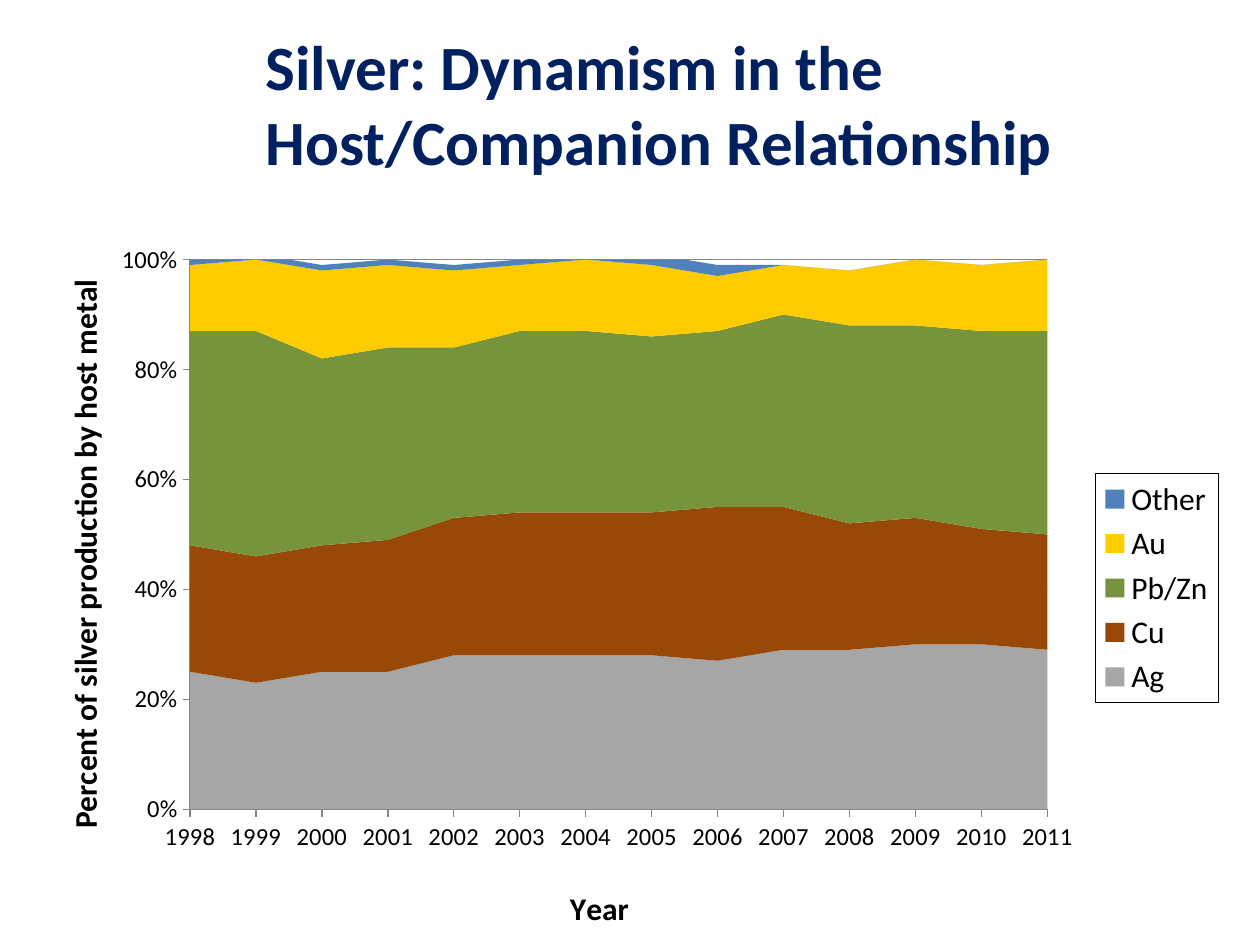
from lxml import etree
from pptx import Presentation
from pptx.chart.data import CategoryChartData
from pptx.dml.color import RGBColor
from pptx.enum.chart import XL_CHART_TYPE, XL_LEGEND_POSITION, XL_TICK_MARK
from pptx.enum.text import MSO_ANCHOR, PP_ALIGN
from pptx.oxml import parse_xml
from pptx.oxml.ns import nsdecls, qn
from pptx.util import Pt

AREA = XL_CHART_TYPE.AREA_STACKED
RIGHT = XL_LEGEND_POSITION.RIGHT
OUT = XL_TICK_MARK.OUTSIDE
TOP = MSO_ANCHOR.TOP
LEFT = PP_ALIGN.LEFT

FONT = "Calibri"
NAVY = RGBColor(0x00, 0x20, 0x60)
BLACK = RGBColor(0x00, 0x00, 0x00)
GREY = RGBColor(0x86, 0x86, 0x86)

YEARS = [str(year) for year in range(1998, 2012)]
# Host metal: colour and yearly share in percent
METALS = {
    "Ag": (RGBColor(0xA6, 0xA6, 0xA6),
           [25, 23, 25, 25, 28, 28, 28, 28, 27, 29, 29, 30, 30, 29]),
    "Cu": (RGBColor(0x98, 0x48, 0x07),
           [23, 23, 23, 24, 25, 26, 26, 26, 28, 26, 23, 23, 21, 21]),
    "Pb/Zn": (RGBColor(0x77, 0x93, 0x3C),
              [39, 41, 34, 35, 31, 33, 33, 32, 32, 35, 36, 35, 36, 37]),
    "Au": (RGBColor(0xFF, 0xCC, 0x00),
           [12, 13, 16, 15, 14, 12, 13, 13, 10, 9, 10, 12, 12, 13]),
    "Other": (RGBColor(0x4F, 0x81, 0xBD),
              [1, 1, 1, 1, 1, 1, 1, 2, 2, 0, 0, 0, 0, 0]),
}


def style(font, size, color=BLACK, bold=False):
    font.name, font.size, font.bold = FONT, Pt(size), bold
    font.color.rgb = color


def place(node, **spots):
    """Fix a chart part at fractions of the chart space."""
    old = node.find(qn("c:layout"))
    if old is None:
        old = etree.Element(qn("c:layout"))
        node.insert(0, old)
    inner = '<c:layoutTarget val="inner"/>' if "w" in spots else ""
    modes = '<c:xMode val="edge"/><c:yMode val="edge"/>'
    sizes = "".join(f'<c:{key} val="{val}"/>' for key, val in spots.items())
    node.replace(old, parse_xml(
        f'<c:layout {nsdecls("c")}><c:manualLayout>{inner}{modes}{sizes}'
        '</c:manualLayout></c:layout>'))


def add_title(slide):
    title = slide.shapes.title
    title.left, title.top, title.width, title.height = (
        Pt(96), Pt(12), Pt(600), Pt(94.5))
    frame = title.text_frame
    frame.text = "Silver: Dynamism in the\nHost/Companion Relationship"
    frame.vertical_anchor = TOP
    for para in frame.paragraphs:
        para.alignment = LEFT
        style(para.runs[0].font, 36, NAVY, True)
    # Indent the shorter first line to sit over the second
    props = frame.paragraphs[0].runs[0].font
    para = frame.paragraphs[0]
    para.line_spacing = 1.0
    para.space_before = props_gap = Pt(0)
    frame.paragraphs[1].space_before = props_gap
    title.element.find(".//" + qn("a:pPr")).set("marL", str(Pt(48.5)))


def set_axis(axis, text):
    axis.major_tick_mark = OUT
    axis.format.line.color.rgb = GREY
    style(axis.tick_labels.font, 14)
    frame = axis.axis_title.text_frame
    frame.text = text
    style(frame.paragraphs[0].runs[0].font, 18, bold=True)


def set_legend(chart):
    chart.has_legend = True
    legend = chart.legend
    legend.position = RIGHT
    legend.include_in_layout = False
    style(legend.font, 18)
    # Thin frame around the legend
    frame = parse_xml(
        f'<c:spPr {nsdecls("c", "a")}><a:ln w="6350"><a:solidFill>'
        f'<a:srgbClr val="{BLACK}"/></a:solidFill></a:ln></c:spPr>')
    node = chart.element.find(".//" + qn("c:legend"))
    node.find(qn("c:txPr")).addprevious(frame)


def add_chart(slide):
    data = CategoryChartData(number_format="0%")
    data.categories = YEARS
    for name, (_, shares) in METALS.items():
        data.add_series(name, [share / 100 for share in shares])
    chart = slide.shapes.add_chart(
        AREA, Pt(12), Pt(132), Pt(690), Pt(408), data).chart
    chart.has_title = False
    style(chart.font, 10)

    # Areas
    plot = chart.plots[0]
    plot.vary_by_categories = False
    for series in plot.series:
        fill = series.format.fill
        fill.solid()
        fill.fore_color.rgb = METALS[series.name][0]

    # Axes
    set_axis(chart.category_axis, "Year")
    axis = chart.value_axis
    set_axis(axis, "Percent of silver production by host metal")
    axis.minimum_scale, axis.maximum_scale, axis.major_unit = 0, 1, 0.2
    axis.tick_labels.number_format = "0%"
    axis.tick_labels.number_format_is_linked = False
    axis.has_major_gridlines = True
    axis.major_gridlines.format.line.color.rgb = GREY

    set_legend(chart)

    # Places of the plot and the axis titles
    area = chart.element.find(".//" + qn("c:plotArea"))
    place(area, x=0.14, y=0.04, w=0.71, h=0.77)
    place(area.find(qn("c:catAx") + "/" + qn("c:title")), x=0.45, y=0.91)
    place(area.find(qn("c:valAx") + "/" + qn("c:title")), x=0.03, y=0.06)


def main():
    deck = Presentation()
    deck.slide_width, deck.slide_height = Pt(720), Pt(540)
    slide = deck.slides.add_slide(deck.slide_layouts[5])
    add_chart(slide)
    add_title(slide)
    deck.save("out.pptx")


if __name__ == "__main__":
    main()
